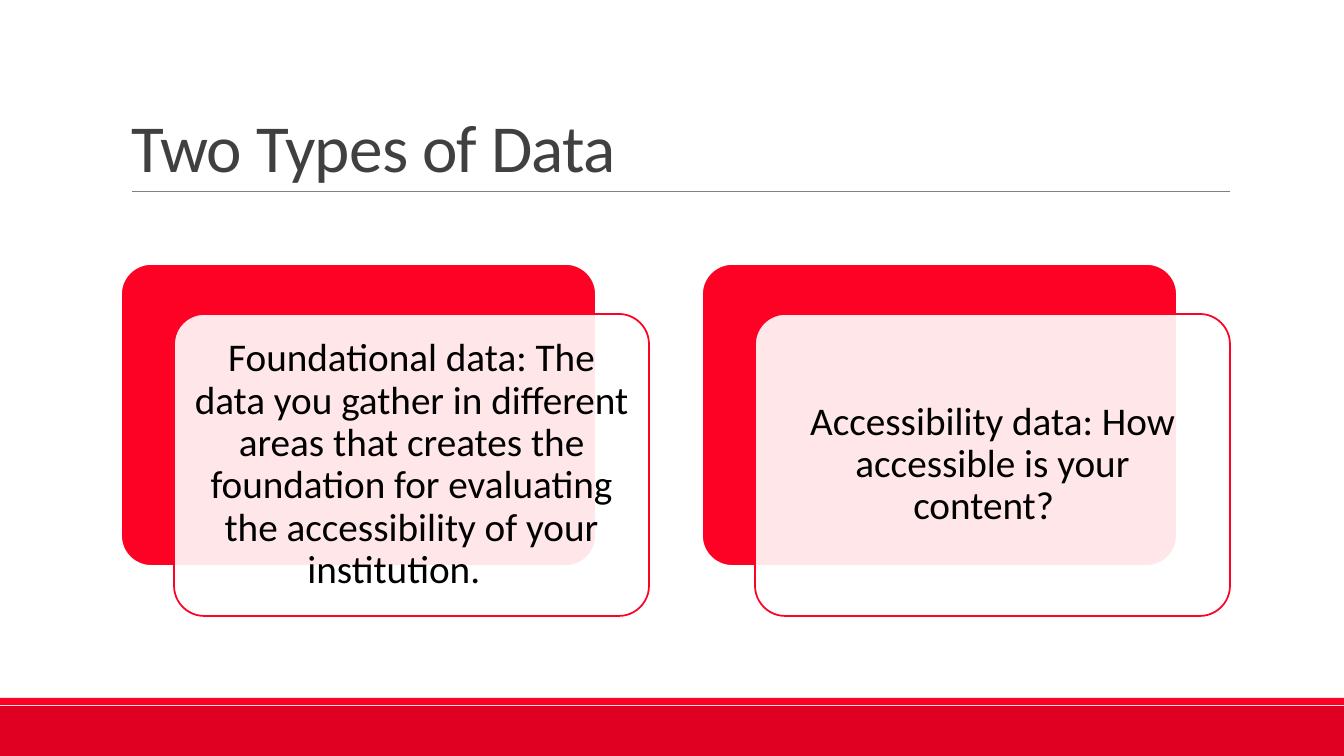
from pptx import Presentation
from pptx import util as u
from pptx.dml.color import RGBColor
from pptx.enum import shapes, text
from pptx.oxml.ns import qn
from lxml import etree

PX = 12192000 / 1344  # EMU per px
NBSP = chr(160)  # no-break space

THEME = {
    "font": "Calibri",
    "red": RGBColor.from_string("FE0226"),
    "dark_red": RGBColor.from_string("E00122"),
    "white": RGBColor.from_string("FFFFFF"),
    "rule": RGBColor.from_string("808080"),
    "title": RGBColor.from_string("404040"),
    "body": RGBColor.from_string("000000"),
    "title_size": u.Pt(48),
    "body_size": u.Pt(28),
}


def px(*lengths):
    return [u.Emu(round(n * PX)) for n in lengths]


def add_box(kind, box, fill, line=None):
    sp = slide.shapes.add_shape(kind, *px(*box))
    sp.shadow.inherit = False
    sp.fill.solid()
    sp.fill.fore_color.rgb = fill
    if line is None:
        sp.line.fill.background()
    else:
        sp.line.color.rgb = line
        sp.line.width = u.Pt(1.25)
    return sp


prs = Presentation()
prs.slide_width, prs.slide_height = px(1344, 756)
slide = prs.slides.add_slide(prs.slide_layouts[5])

# Footer bands
add_box(shapes.MSO_SHAPE.RECTANGLE, (0, 706, 1344, 50), THEME["dark_red"])
add_box(shapes.MSO_SHAPE.RECTANGLE, (0, 698, 1344, 7), THEME["red"])

# Rule under the title
rule = slide.shapes.add_connector(shapes.MSO_CONNECTOR.STRAIGHT, *px(132, 191, 1230, 191))
rule.line.color.rgb = THEME["rule"]
rule.line.width = u.Pt(0.5)
etree.SubElement(rule._element.spPr, qn("a:effectLst"))

# Title
title = slide.shapes.title
title.left, title.top, title.width, title.height = px(121, 31, 1109, 160)
tf = title.text_frame
tf.text = "Two Types of Data"
tf.word_wrap = True
tf.auto_size = text.MSO_AUTO_SIZE.NONE
tf.vertical_anchor = text.MSO_ANCHOR.BOTTOM
p = tf.paragraphs[0]
p.alignment = text.PP_ALIGN.LEFT
p.line_spacing = 0.85
r = p.runs[0]
r.font.name = THEME["font"]
r.font.size = THEME["title_size"]
r.font.color.rgb = THEME["title"]
r._r.get_or_add_rPr().set("spc", "-50")

# Cards: a red back plate and a translucent front plate with the text
CARD_LEFT, CARD_TOP, CARD_W, CARD_H = 121, 264, 475, 302
CARD_STEP, FRONT_DX, FRONT_DY = 581, 53, 50
CARDS = [
    f"Foundational data: The data you gather in different areas{NBSP}that creates "
    "the foundation for evaluating the accessibility of your "
    f"institution.{NBSP} {NBSP}{NBSP}",
    f"Accessibility data: How accessible is your content?{NBSP}{NBSP}",
]
for i, wording in enumerate(CARDS):
    left = CARD_LEFT + i * CARD_STEP
    back = add_box(shapes.MSO_SHAPE.ROUNDED_RECTANGLE,
                   (left, CARD_TOP, CARD_W, CARD_H), THEME["red"], THEME["white"])
    front = add_box(shapes.MSO_SHAPE.ROUNDED_RECTANGLE,
                    (left + FRONT_DX, CARD_TOP + FRONT_DY, CARD_W, CARD_H),
                    THEME["white"], THEME["red"])
    for sp in (back, front):
        sp.adjustments[0] = 0.1
    color = front._element.spPr.find(qn("a:solidFill"))[0]
    etree.SubElement(color, qn("a:alpha"), val="90000")

    tf = front.text_frame
    tf.text = wording
    tf.word_wrap = True
    tf.vertical_anchor = text.MSO_ANCHOR.MIDDLE
    tf.margin_left, tf.margin_top, tf.margin_right, tf.margin_bottom = px(11, 12, 11, 12)
    p = tf.paragraphs[0]
    p.alignment = text.PP_ALIGN.CENTER
    p.line_spacing = 0.9
    r = p.runs[0]
    r.font.name = THEME["font"]
    r.font.size = THEME["body_size"]
    r.font.color.rgb = THEME["body"]

prs.save("out.pptx")
